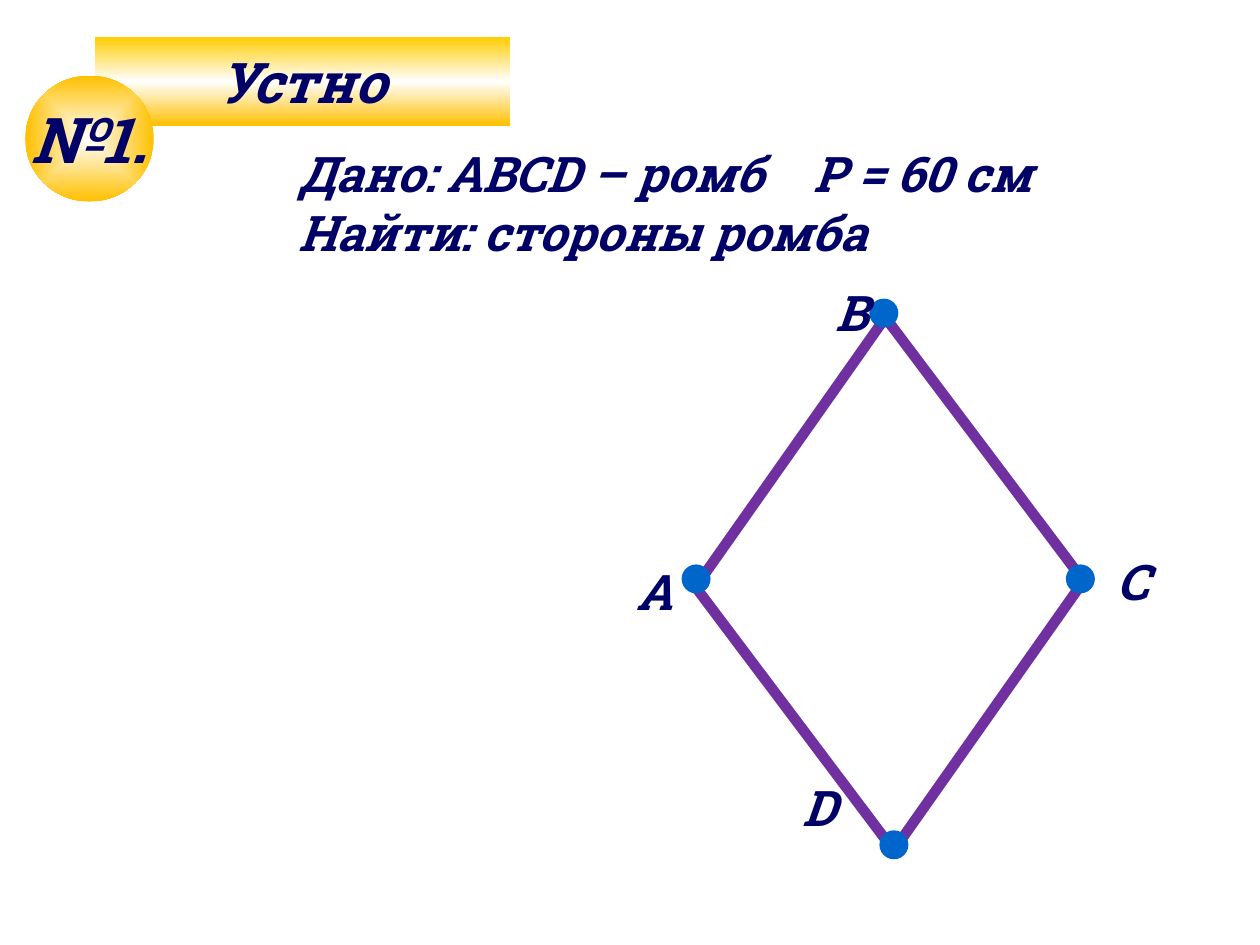
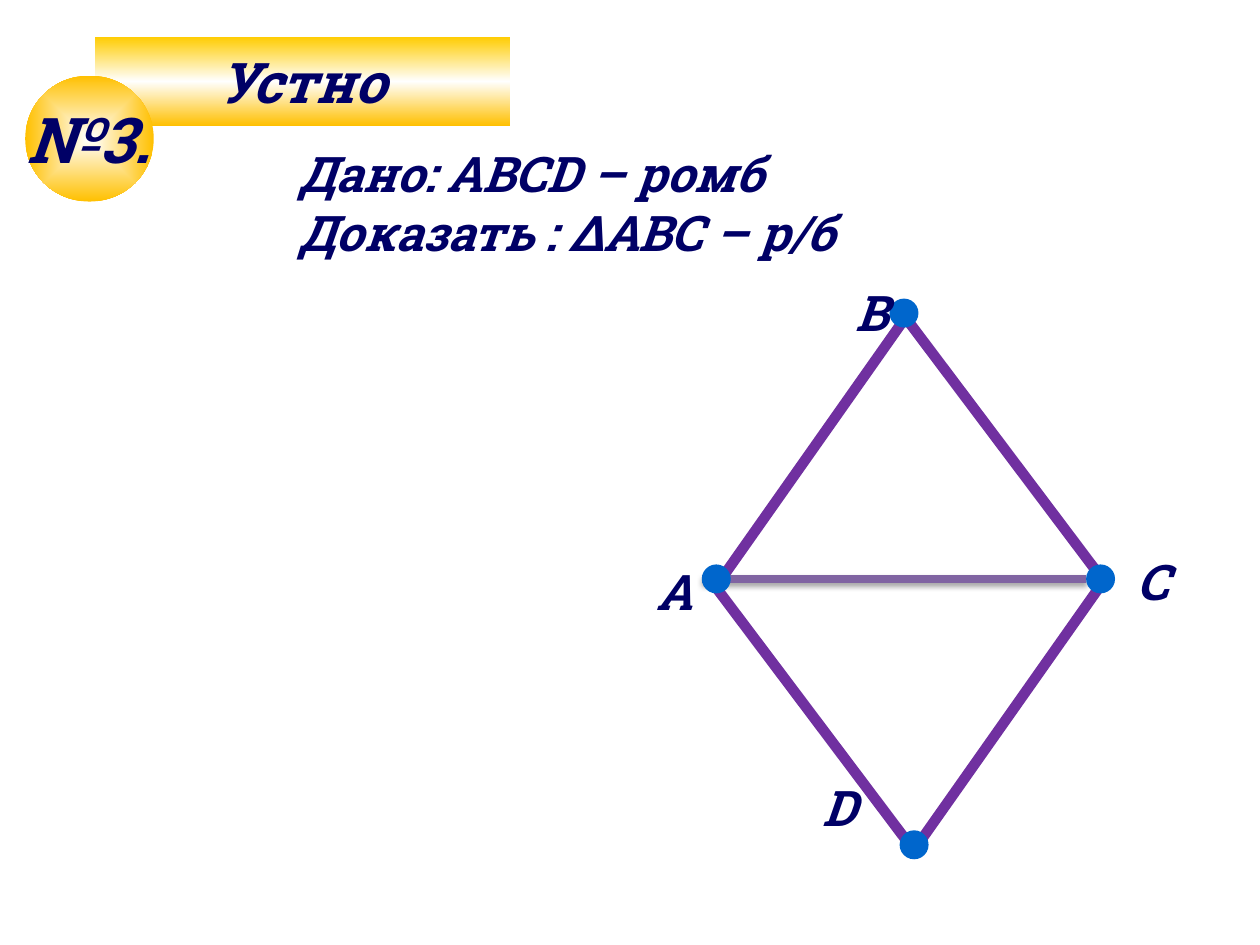
from pptx import Presentation
from pptx.dml.color import RGBColor
from pptx.enum.shapes import MSO_CONNECTOR, MSO_SHAPE
from pptx.enum.text import MSO_ANCHOR, MSO_AUTO_SIZE, PP_ALIGN
from pptx.oxml import parse_xml
from pptx.oxml.ns import nsdecls, qn
from pptx.util import Inches, Pt

ELLIPSE = MSO_SHAPE.OVAL
DIAMOND = MSO_SHAPE.DIAMOND
STRAIGHT = MSO_CONNECTOR.STRAIGHT
MIDDLE = MSO_ANCHOR.MIDDLE
FIT_SHAPE = MSO_AUTO_SIZE.SHAPE_TO_FIT_TEXT
FIXED_SIZE = MSO_AUTO_SIZE.NONE
CENTER = PP_ALIGN.CENTER

NAVY = RGBColor(0x00, 0x00, 0x66)
BLUE = RGBColor(0x00, 0x66, 0xCC)
PURPLE = RGBColor(0x70, 0x30, 0xA0)
LILAC = RGBColor(0x80, 0x64, 0xA2)
YELLOW = RGBColor(0xFF, 0xCC, 0x00)
AMBER = RGBColor(0xFF, 0xC0, 0x00)
WHITE = RGBColor(0xFF, 0xFF, 0xFF)
BLACK = RGBColor(0x00, 0x00, 0x00)

FONT = "Roboto Slab"
WIDTH, HEIGHT = Inches(10), Inches(7.5)
COLUMN, ROW = WIDTH / 100, HEIGHT / 75

LINEAR = '<a:lin ang="5400000" scaled="1"/>'
RADIAL = ('<a:path path="shape"><a:fillToRect l="50000" t="50000" '
          'r="50000" b="50000"/></a:path>')

DOT = 2.3
VERTICES = {
    "А": (55.25, 45.95),
    "В": (70.15, 24.85),
    "С": (85.75, 45.95),
    "D": (70.95, 67.05),
}
LABELS = {
    "А": (49.5, 44.1),
    "В": (65.3, 21.9),
    "С": (87.6, 43.3),
    "D": (62.7, 61.2),
}


def grid(left, top, width, height):
    return [round(length) for length in
            (left * COLUMN, top * ROW, width * COLUMN, height * ROW)]


def write(shape, text, size=28, align=None, anchor=None, wrap=False,
          fit=FIT_SHAPE, tab=None):
    frame = shape.text_frame
    frame.word_wrap = wrap
    frame.auto_size = fit
    if anchor is not None:
        frame.vertical_anchor = anchor
    for index, line in enumerate(text.split("\n")):
        para = frame.add_paragraph() if index else frame.paragraphs[0]
        if align is not None:
            para.alignment = align
        if tab and "\t" in line:
            para._p.get_or_add_pPr().append(parse_xml(
                f'<a:tabLst {nsdecls("a")}>'
                f'<a:tab pos="{round(tab * COLUMN)}" algn="l"/></a:tabLst>'))
        span = para.add_run()
        span.text = line
        span.font.name = FONT
        span.font.size = Pt(size)
        span.font.bold = span.font.italic = True
        span.font.color.rgb = NAVY


def fill_gradient(shape, stops, direction):
    marks = "".join(
        f'<a:gs pos="{share * 1000}"><a:srgbClr val="{color}"/></a:gs>'
        for share, color in stops)
    shape.element.spPr.find(qn("a:prstGeom")).addnext(parse_xml(
        f'<a:gradFill {nsdecls("a")} rotWithShape="1">'
        f'<a:gsLst>{marks}</a:gsLst>{direction}</a:gradFill>'))


def add_plain_shape(page, kind, place):
    shape = page.shapes.add_shape(kind, *grid(*place))
    shape.shadow.inherit = False
    return shape


def add_title(page, text):
    title = page.shapes.title
    title.left, title.top, title.width, title.height = grid(7.5, 2.9, 33, 7.1)
    title.element.spPr.append(parse_xml(
        f'<a:prstGeom {nsdecls("a")} prst="roundRect"><a:avLst>'
        '<a:gd name="adj" fmla="val 25400"/></a:avLst></a:prstGeom>'))
    fill_gradient(title, [(0, YELLOW), (50, WHITE), (100, AMBER)], LINEAR)
    write(title, text, size=32, align=CENTER, anchor=MIDDLE, fit=FIXED_SIZE)


def add_number(page, text):
    badge = add_plain_shape(page, ELLIPSE, (2, 6, 10.2, 10))
    fill_gradient(badge, [(0, WHITE), (100, AMBER)], RADIAL)
    badge.line.fill.background()
    write(badge, text, size=36, align=CENTER, anchor=MIDDLE, fit=FIXED_SIZE)


def add_text(page, text, place, **style):
    write(page.shapes.add_textbox(*grid(*place)), text, **style)


def add_rhombus(page, shift):
    rhombus = add_plain_shape(page, DIAMOND, (55.2 + shift, 25.2, 30.8, 42.3))
    rhombus.rotation = 359.1
    rhombus.fill.background()
    rhombus.line.color.rgb = PURPLE
    rhombus.line.width = Pt(6)


def add_diagonal(page, start, end, shift):
    left, top = VERTICES[start]
    right, bottom = VERTICES[end]
    nudge = shift - DOT / 2
    x1, y1, x2, y2 = grid(left + nudge, top, right + nudge, bottom)
    diagonal = page.shapes.add_connector(STRAIGHT, x1, y1, x2, y2)
    diagonal.line.color.rgb = LILAC
    diagonal.line.width = Pt(4.5)
    diagonal.element.spPr.append(parse_xml(
        f'<a:effectLst {nsdecls("a")}><a:outerShdw blurRad="{Pt(3.1)}" '
        f'dist="{Pt(1.8)}" dir="5400000" rotWithShape="0">'
        f'<a:srgbClr val="{BLACK}"><a:alpha val="35000"/></a:srgbClr>'
        '</a:outerShdw></a:effectLst>'))


def add_vertices(page, shift):
    for name, (x, y) in VERTICES.items():
        dot = add_plain_shape(
            page, ELLIPSE, (x - DOT / 2 + shift, y - DOT / 2, DOT, DOT))
        dot.fill.solid()
        dot.fill.fore_color.rgb = BLUE
        dot.line.fill.background()
        left, top = LABELS[name]
        add_text(page, name, (left + shift, top, 5, 5.7))


def add_problem(deck, number, statement, shift=0, diagonal=None):
    page = deck.slides.add_slide(deck.slide_layouts[5])
    add_title(page, "Устно")
    add_rhombus(page, shift)
    add_text(page, statement, (22.7, 10.9, 77.3, 10.4), wrap=True, tab=40.9)
    if diagonal:
        add_diagonal(page, *diagonal, shift)
    add_vertices(page, shift)
    add_number(page, number)


def main():
    deck = Presentation()
    deck.slide_width, deck.slide_height = WIDTH, HEIGHT
    add_problem(deck, "№1.",
                "Дано: АВСD – ромб\tР = 60 см\nНайти: стороны ромба")
    add_problem(deck, "№3.", "Дано: АВСD – ромб\nДоказать : ΔАВС – р/б",
                shift=1.6, diagonal=("А", "С"))
    deck.save("out.pptx")


if __name__ == "__main__":
    main()
